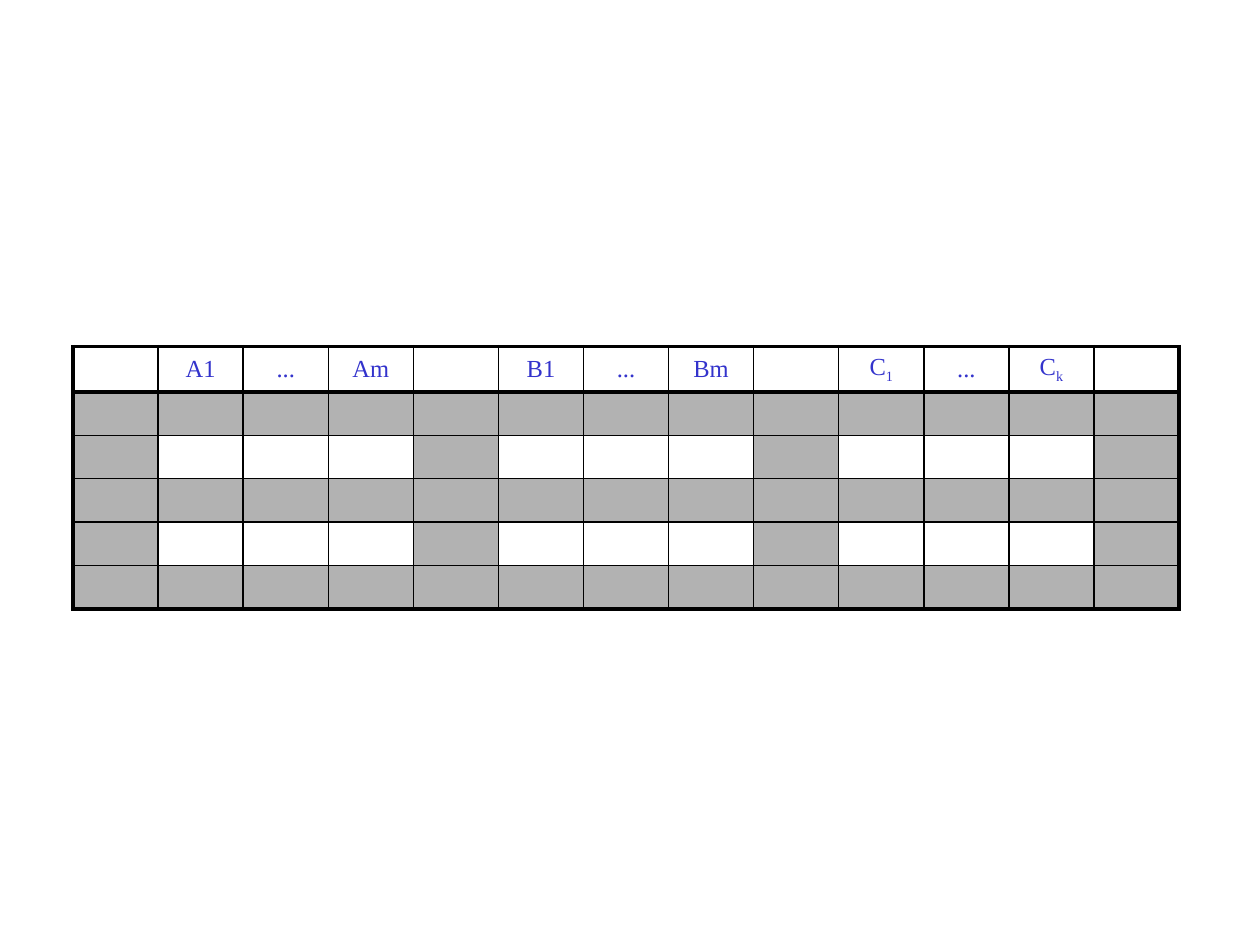
import lxml.etree
import pptx
import pptx.dml.color
import pptx.enum.text
import pptx.oxml.ns
import pptx.util


def color(hex_string):
    return pptx.dml.color.RGBColor.from_string(hex_string)


def add_border(cell, side, points):
    qualified = pptx.oxml.ns.qn
    properties = cell._tc.get_or_add_tcPr()
    line = lxml.etree.SubElement(properties, qualified(f"a:ln{side}"), w=str(pptx.util.Pt(points)))
    fill = lxml.etree.SubElement(line, qualified("a:solidFill"))
    lxml.etree.SubElement(fill, qualified("a:srgbClr"), val="000000")


presentation = pptx.Presentation()
presentation.slide_width = pptx.util.Inches(10)
presentation.slide_height = pptx.util.Inches(7.5)
slide = presentation.slides.add_slide(presentation.slide_layouts[6])

headers = [
    [], ["A1"], ["..."], ["Am"],
    [], ["B1"], ["..."], ["Bm"],
    [], ["C", "1"], ["..."], ["C", "k"], [],
]
row_count = 6
column_count = len(headers)
group_width = 4
column_width = pptx.util.Inches(8.78 / column_count)
header_height = pptx.util.Inches(0.36)
row_height = pptx.util.Inches(0.335)

table = slide.shapes.add_table(
    row_count, column_count,
    pptx.util.Inches(0.58), pptx.util.Inches(2.75),
    column_width * column_count, header_height + row_height * (row_count - 1),
).table
table.first_row = False
table.horz_banding = False
for column in table.columns:
    column.width = column_width
for row in table.rows:
    row.height = row_height
table.rows[0].height = header_height

for row in range(row_count):
    for column in range(column_count):
        cell = table.cell(row, column)
        cell.margin_top = cell.margin_bottom = pptx.util.Inches(0.02)
        cell.vertical_anchor = pptx.enum.text.MSO_ANCHOR.MIDDLE
        heavy_sides = {
            "L": column == 0,
            "R": column == column_count - 1,
            "T": row in (0, 1),
            "B": row in (0, row_count - 1),
        }
        for side, heavy in heavy_sides.items():
            add_border(cell, side, 2.25 if heavy else 1)
        if row > 0 and (row % 2 == 1 or column % group_width == 0):
            cell.fill.solid()
            cell.fill.fore_color.rgb = color("B2B2B2")
        else:
            cell.fill.background()

for column, parts in enumerate(headers):
    paragraph = table.cell(0, column).text_frame.paragraphs[0]
    paragraph.alignment = pptx.enum.text.PP_ALIGN.CENTER
    for position, text in enumerate(parts):
        run = paragraph.add_run()
        run.text = text
        run.font.name = "Times New Roman"
        run.font.size = pptx.util.Pt(14)
        run.font.color.rgb = color("3333CC")
        if position == 1:
            run.font._element.set("baseline", "-25000")

presentation.save("out.pptx")
